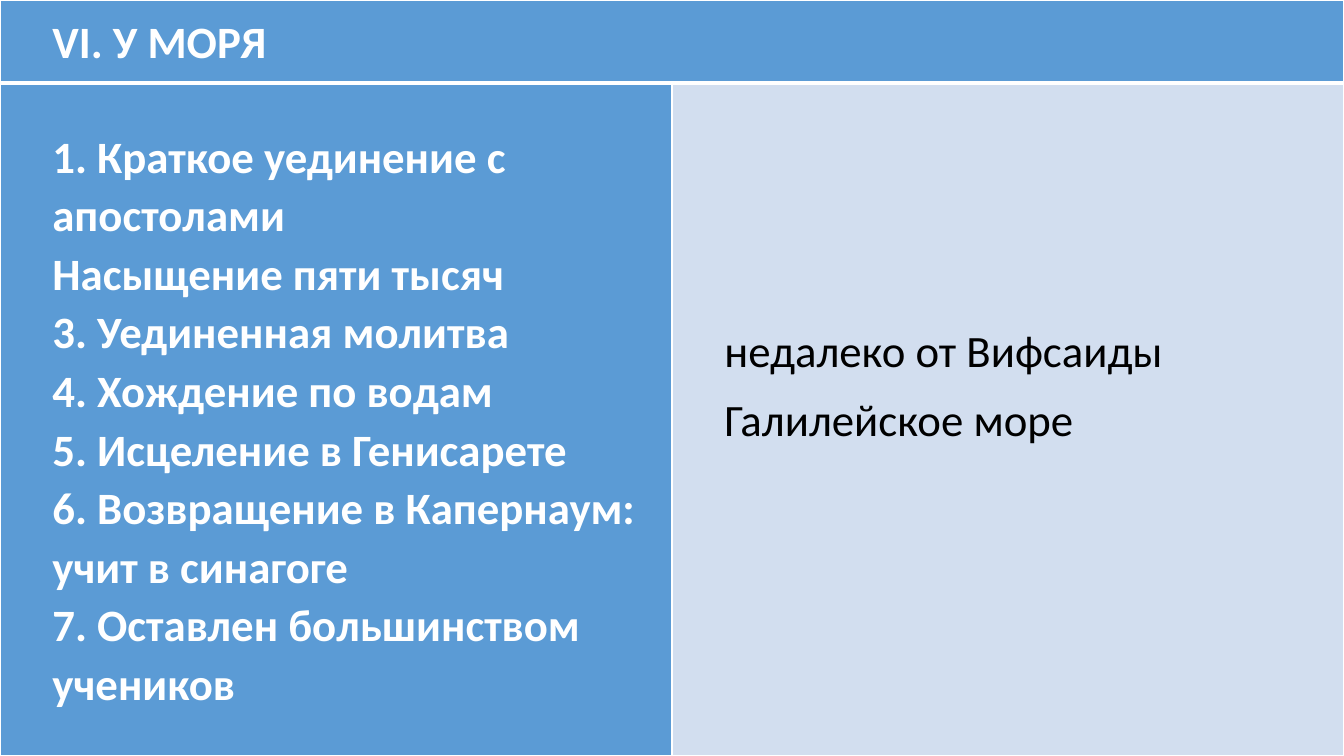
"""Build a table slide listing the events by the sea and their places."""
from dataclasses import dataclass

from lxml.etree import SubElement
from pptx import Presentation
from pptx.dml.color import RGBColor
from pptx.enum.text import MSO_ANCHOR
from pptx.oxml.ns import qn
from pptx.util import Inches, Pt

HEADING = [("VI. У МОРЯ",)]
EVENTS = [(
    "1. Краткое уединение с апостолами",
    "Насыщение пяти тысяч",
    "3. Уединенная молитва",
    "4. Хождение по водам",
    "5. Исцеление в Генисарете",
    "6. Возвращение в Капернаум: учит в синагоге",
    "7. Оставлен большинством учеников",
)]
PLACES = [("недалеко от Вифсаиды",), ("Галилейское море",)]

WIDTH, HEIGHT = Inches(13.33), Inches(7.5)
HEADING_SHARE = 0.11
PADDING = Inches(0.02)
PLACES_LIFT = Inches(0.69)


@dataclass(frozen=True)
class Theme:
    font: str = "Calibri"
    size: int = 32
    line_spacing: float = 1.07
    space_after: int = 8
    indent: float = 0.5
    accent: str = "5B9BD5"
    pale: str = "D2DEEF"
    light: str = "FFFFFF"
    dark: str = "000000"
    thin: int = 1
    thick: int = 3


THEME = Theme()


def draw_borders(cell, top, bottom):
    properties = cell._tc.get_or_add_tcPr()
    sides = {"L": THEME.thin, "R": THEME.thin, "T": top, "B": bottom}
    for side, weight in sides.items():
        line = SubElement(properties, qn(f"a:ln{side}"), w=str(Pt(weight)))
        paint = SubElement(line, qn("a:solidFill"))
        SubElement(paint, qn("a:srgbClr"), val=THEME.light)


def style_cell(cell, fill, top, bottom):
    draw_borders(cell, top, bottom)
    cell.fill.solid()
    cell.fill.fore_color.rgb = RGBColor.from_string(fill)
    cell.vertical_anchor = MSO_ANCHOR.MIDDLE
    cell.margin_left = cell.margin_right = PADDING
    cell.margin_top = cell.margin_bottom = PADDING


def write_cell(cell, paragraphs, color, bold, space_after):
    frame = cell.text_frame
    for number, lines in enumerate(paragraphs):
        paragraph = frame.add_paragraph() if number else frame.paragraphs[0]
        paragraph.line_spacing = THEME.line_spacing
        paragraph.space_after = Pt(space_after)
        properties = paragraph._p.get_or_add_pPr()
        properties.set("marL", str(Inches(THEME.indent)))
        properties.set("indent", "0")
        for position, line in enumerate(lines):
            if position:
                paragraph.add_line_break()
            run = paragraph.add_run()
            run.text = line
            run.font.name = THEME.font
            run.font.size = Pt(THEME.size)
            run.font.bold = bold
            run.font.color.rgb = RGBColor.from_string(color)
        for line_break in paragraph._p.findall(qn("a:br")):
            SubElement(line_break, qn("a:rPr"), sz=str(THEME.size * 100))


def main():
    deck = Presentation()
    deck.slide_width, deck.slide_height = WIDTH, HEIGHT
    slide = deck.slides.add_slide(deck.slide_layouts[6])
    table = slide.shapes.add_table(2, 2, 0, 0, WIDTH, HEIGHT).table
    table.first_row = table.horz_banding = False
    for column in table.columns:
        column.width = WIDTH // 2
    heading_row, body_row = table.rows
    heading_row.height = round(HEIGHT * HEADING_SHARE)
    body_row.height = HEIGHT - heading_row.height

    for cell in heading_row.cells:
        style_cell(cell, THEME.accent, THEME.thin, THEME.thick)
    for cell, fill in zip(body_row.cells, (THEME.accent, THEME.pale)):
        style_cell(cell, fill, THEME.thick, THEME.thin)

    heading, events, places = table.cell(0, 0), table.cell(1, 0), table.cell(1, 1)
    heading.merge(table.cell(0, 1))
    places.margin_bottom = PADDING + PLACES_LIFT
    write_cell(heading, HEADING, THEME.light, True, 0)
    write_cell(events, EVENTS, THEME.light, True, THEME.space_after)
    write_cell(places, PLACES, THEME.dark, False, THEME.space_after)
    deck.save("out.pptx")


if __name__ == "__main__":
    main()
